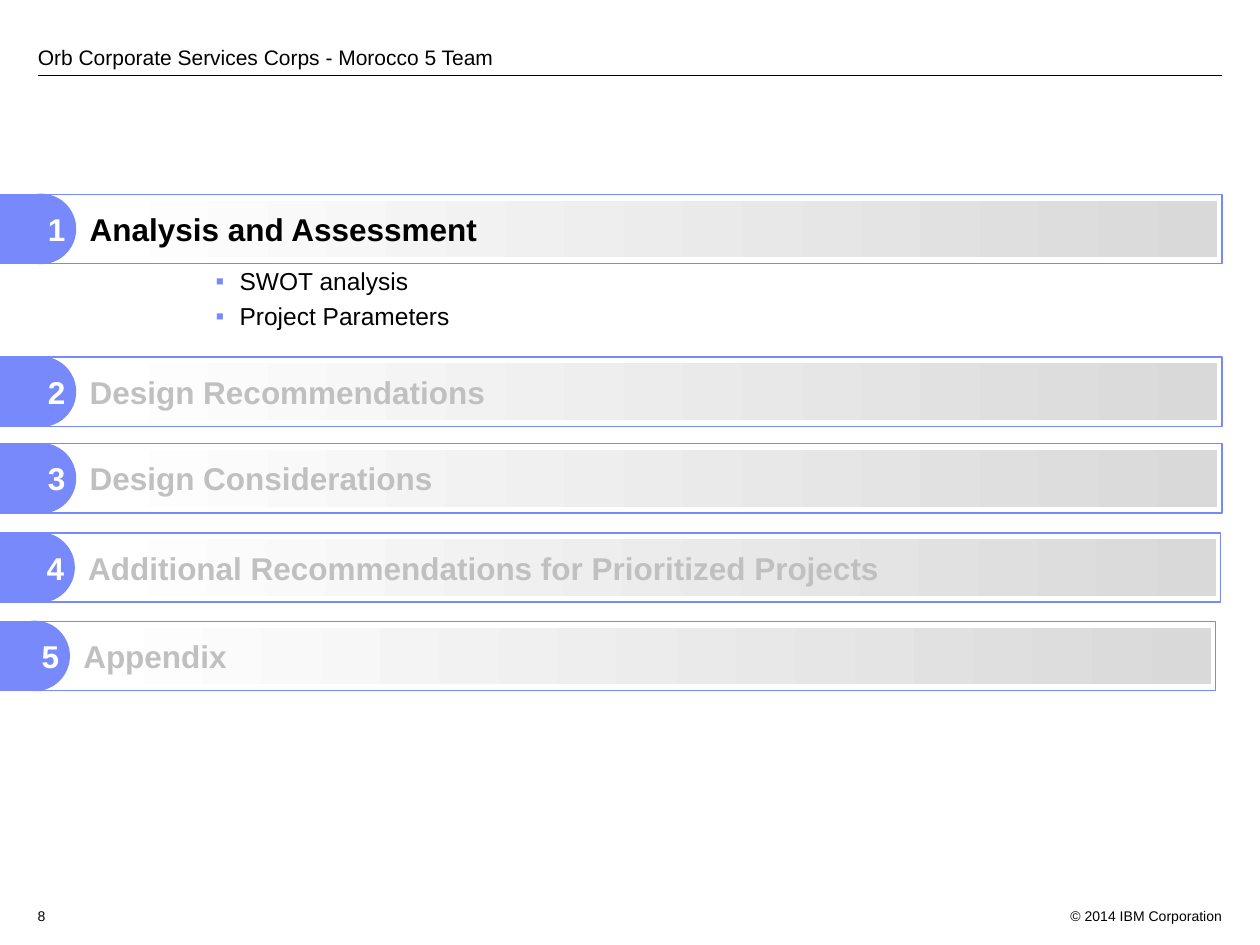
from dataclasses import dataclass

from lxml import etree
from pptx import Presentation
from pptx.dml.color import RGBColor
from pptx.enum.shapes import MSO_CONNECTOR, MSO_SHAPE
from pptx.enum.text import MSO_ANCHOR, MSO_AUTO_SIZE, PP_ALIGN
from pptx.oxml.ns import qn
from pptx.util import Pt

RECT, OVAL = MSO_SHAPE.RECTANGLE, MSO_SHAPE.OVAL
LEFT, RIGHT = PP_ALIGN.LEFT, PP_ALIGN.RIGHT
TOP, MIDDLE, BOTTOM = MSO_ANCHOR.TOP, MSO_ANCHOR.MIDDLE, MSO_ANCHOR.BOTTOM


@dataclass(frozen=True)
class Theme:
    font: str = "Arial"
    ink: RGBColor = RGBColor(0x00, 0x00, 0x00)
    white: RGBColor = RGBColor(0xFF, 0xFF, 0xFF)
    accent: RGBColor = RGBColor(0x78, 0x89, 0xFB)
    muted: RGBColor = RGBColor(0xC0, 0xC0, 0xC0)
    shade: RGBColor = RGBColor(0xD9, 0xD9, 0xD9)
    section_size: int = 18
    topic_size: int = 14
    header_size: int = 12
    footer_size: int = 8


THEME = Theme()


def write(frame, text, size, color, align=LEFT, anchor=TOP, insets=(7.2, 3.6, 7.2, 3.6),
          bold=False, wrap=True):
    """Fill the first paragraph of a text frame with one formatted run."""
    frame.auto_size = MSO_AUTO_SIZE.NONE
    frame.word_wrap = wrap
    frame.vertical_anchor = anchor
    (frame.margin_left, frame.margin_top,
     frame.margin_right, frame.margin_bottom) = [Pt(inset) for inset in insets]
    paragraph = frame.paragraphs[0]
    paragraph.alignment = align
    run = paragraph.add_run()
    run.text = text
    run.font.name, run.font.size, run.font.bold = THEME.font, Pt(size), bold
    run.font.color.rgb = color


def add_part(group, kind, left, top, width, height, fill=None, line=None):
    """Add a flat shape to a section row."""
    part = group.shapes.add_shape(kind, Pt(left), Pt(top), Pt(width), Pt(height))
    part.shadow.inherit = False
    if fill is None:
        part.fill.background()
    else:
        part.fill.solid()
        part.fill.fore_color.rgb = fill
    if line is None:
        part.line.fill.background()
    else:
        part.line.color.rgb = line
        part.line.width = Pt(0.75)
    return part


prs = Presentation()
prs.slide_width, prs.slide_height = Pt(720), Pt(540)
slide = prs.slides.add_slide(prs.slide_layouts[1])

# Header with its rule
header = slide.shapes.title
header.left, header.top, header.width, header.height = Pt(14.4), Pt(10.8), Pt(621.4), Pt(28.8)
write(header.text_frame, "Orb Corporate Services Corps - Morocco 5 Team",
      THEME.header_size, THEME.ink, anchor=BOTTOM, insets=(7.2, 0, 7.2, 0))
rule = slide.shapes.add_connector(MSO_CONNECTOR.STRAIGHT, Pt(21.6), Pt(43.2), Pt(698.4), Pt(43.2))
rule.line.color.rgb = THEME.ink
rule.line.width = Pt(0.75)
etree.SubElement(rule._element.spPr, qn("a:effectLst"))

# Footer: page number and copyright
for text, left, width, align in (("8", 14.4, 28.8, LEFT),
                                 ("© 2014 IBM Corporation", 597.6, 108, RIGHT)):
    footer = slide.shapes.add_textbox(Pt(left), Pt(514.8), Pt(width), Pt(14.4))
    write(footer.text_frame, text, THEME.footer_size, THEME.ink, align)

# Topics of the current section
topics = slide.placeholders[1]
topics.left, topics.top, topics.width, topics.height = Pt(116), Pt(148.3), Pt(582.4), Pt(45)
topics_frame = topics.text_frame
topics_frame.auto_size = MSO_AUTO_SIZE.NONE
topics_frame.vertical_anchor = TOP
for index, topic in enumerate(("SWOT analysis", "Project Parameters")):
    paragraph = topics_frame.add_paragraph() if index else topics_frame.paragraphs[0]
    paragraph.space_before = Pt(3.2 if index else 0)
    properties = paragraph._p.get_or_add_pPr()
    properties.set("marL", str(Pt(13.7)))
    properties.set("indent", str(-Pt(13.7)))
    bullet_color = etree.SubElement(properties, qn("a:buClr"))
    etree.SubElement(bullet_color, qn("a:srgbClr"), val=str(THEME.accent))
    etree.SubElement(properties, qn("a:buFont"), typeface=THEME.font)
    etree.SubElement(properties, qn("a:buChar"), char="▪")
    run = paragraph.add_run()
    run.text = topic
    run.font.name, run.font.size = THEME.font, Pt(THEME.topic_size)
    run.font.color.rgb = THEME.ink

# Agenda sections: title, left, top, title colour
SECTIONS = (
    ("Analysis and Assessment", 0, 111, THEME.ink),
    ("Design Recommendations", 0, 204, THEME.muted),
    ("Design Considerations", 0, 253.5, THEME.muted),
    ("Additional Recommendations for Prioritized Projects", -0.8, 304.5, THEME.muted),
    ("Appendix", -3.6, 355, THEME.muted),
)
ROW_HEIGHT = 39.6
for number, (section, left, top, title_color) in enumerate(SECTIONS, 1):
    row = slide.shapes.add_group_shape()
    badge = add_part(row, OVAL, left + 3.6, top, ROW_HEIGHT, ROW_HEIGHT,
                     THEME.accent, THEME.accent)
    write(badge.text_frame, str(number), THEME.section_size, THEME.white, RIGHT, MIDDLE,
          (0, 0, 0, 0), bold=True, wrap=False)
    add_part(row, RECT, left, top, 698.4, ROW_HEIGHT, line=THEME.accent)
    add_part(row, RECT, left, top, 21.6, ROW_HEIGHT, THEME.accent)
    bar = add_part(row, RECT, left + 51.2, top + 3.6, 644.4, 32.4)
    bar.fill.gradient()
    bar.fill.gradient_angle = 0
    for stop, color in zip(bar.fill.gradient_stops, (THEME.white, THEME.shade)):
        stop.color.rgb = color
    write(bar.text_frame, section, THEME.section_size, title_color, LEFT, MIDDLE,
          (0, 3.6, 7.2, 3.6), bold=True, wrap=False)

prs.save("out.pptx")
